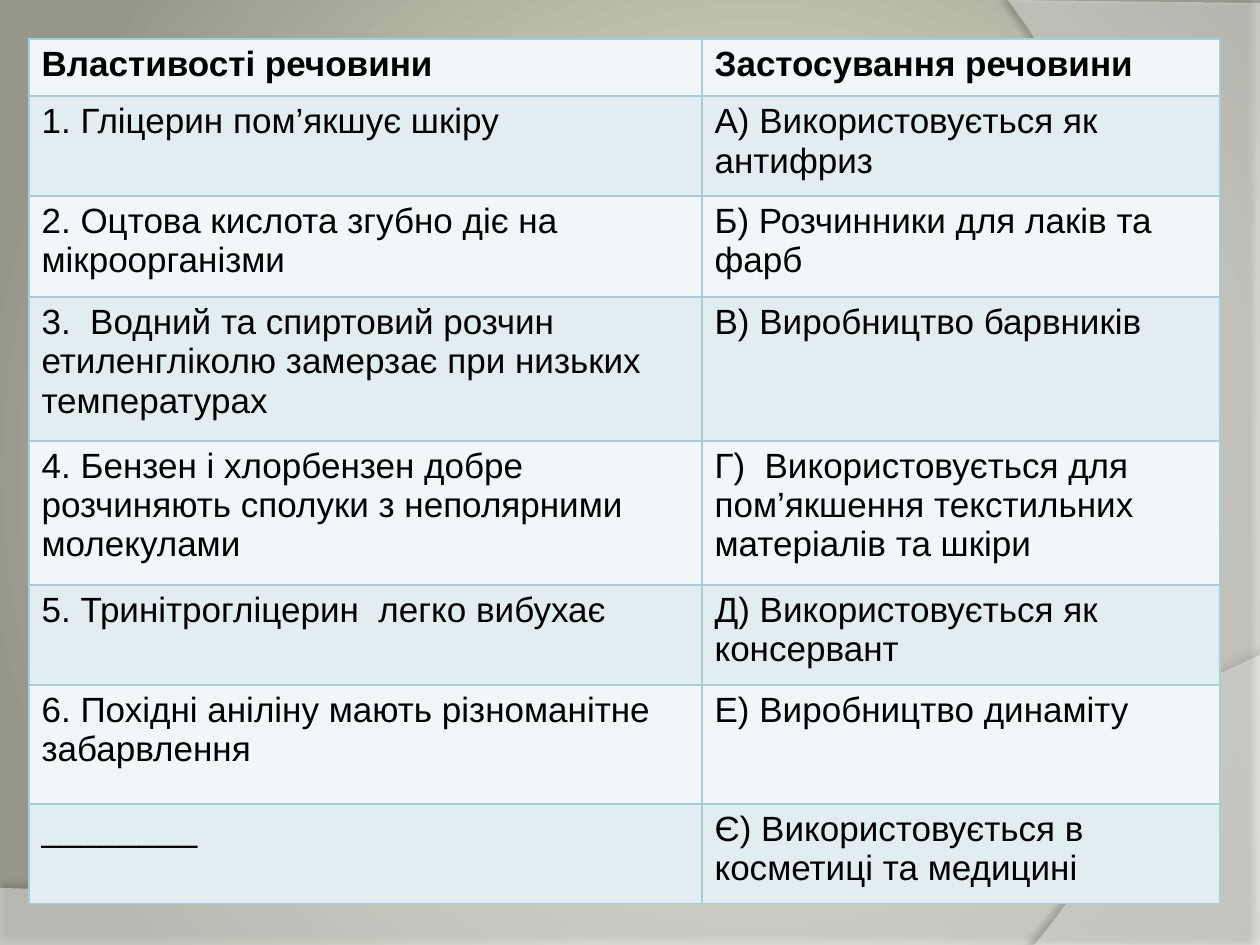
from lxml import etree
from pptx import Presentation
from pptx import util as u
from pptx.dml.color import RGBColor
from pptx.oxml.ns import qn

SCALE = 914400 / 126
ROWS = [
    (57, "Властивості речовини", "Застосування речовини"),
    (100, "1. Гліцерин пом’якшує шкіру", "А) Використовується як антифриз"),
    (101, "2. Оцтова кислота згубно діє на мікроорганізми", "Б) Розчинники для лаків та фарб"),
    (144, "3.  Водний та спиртовий розчин етиленгліколю замерзає при низьких температурах",
     "В) Виробництво барвників"),
    (144, "4. Бензен і хлорбензен добре розчиняють сполуки з неполярними молекулами",
     "Г)  Використовується для пом’якшення текстильних матеріалів та шкіри"),
    (100, "5. Тринітрогліцерин  легко вибухає", "Д) Використовується як консервант"),
    (119, "6. Похідні аніліну мають різноманітне забарвлення", "Е) Виробництво динаміту"),
    (100, "________", "Є) Використовується в косметиці та медицині"),
]


def px(length):
    return u.Emu(round(length * SCALE))


def color(code):
    return RGBColor.from_string(code)


def node(parent, tag, **attributes):
    return etree.SubElement(parent, qn(tag), {key: str(value) for key, value in attributes.items()})


def curve(start, first, second, end, steps=40):
    points = []
    for step in range(steps + 1):
        t = step / steps
        weights = ((1 - t) ** 3, 3 * t * (1 - t) ** 2, 3 * t * t * (1 - t), t ** 3)
        points.append(tuple(sum(weight * value for weight, value in zip(weights, axis))
                            for axis in zip(start, first, second, end)))
    return points


class SlideBuilder:
    """Holds the style and the current slide, and adds its elements."""

    font = "Arial"
    size = 20
    ink = "000000"
    border = "A8CDD7"
    bands = ("F1F6F8", "E1EDF0")

    def __init__(self, page):
        self.page = page

    def background(self, inner, outer):
        fill = self.page.background.fill
        fill.gradient()
        for stop, code, position in zip(fill.gradient_stops, (inner, outer), (0, 1)):
            stop.color.rgb = color(code)
            stop.position = position
        gradient = self.page.element.find(".//" + qn("a:gradFill"))
        gradient.remove(gradient.find(qn("a:lin")))
        radial = node(gradient, "a:path", path="circle")
        node(radial, "a:fillToRect", l=60000, t=50000, r=40000, b=50000)

    def wave(self, points, opacity, shadow_opacity, distance, angle):
        builder = self.page.shapes.build_freeform(*points[0], scale=SCALE)
        builder.add_line_segments(points[1:], close=True)
        shape = builder.convert_to_shape()
        shape.fill.solid()
        shape.fill.fore_color.rgb = color("FFFFFF")
        shape.line.fill.background()
        shape.shadow.inherit = False
        properties = shape.element.spPr
        node(properties.find(qn("a:solidFill"))[0], "a:alpha", val=opacity * 1000)
        shadow = node(properties.find(qn("a:effectLst")), "a:outerShdw", blurRad=u.Pt(4),
                      dist=u.Pt(distance), dir=angle * 60000, algn="ctr", rotWithShape=0)
        shade = node(shadow, "a:srgbClr", val=self.ink)
        node(shade, "a:alpha", val=shadow_opacity * 1000)

    def table(self, left, top, widths, rows):
        heights = [row[0] for row in rows]
        frame = self.page.shapes.add_table(len(rows), len(widths), px(left), px(top),
                                           px(sum(widths)), px(sum(heights)))
        table = frame.table
        for column, width in zip(table.columns, widths):
            column.width = px(width)
        for index, (height, *words) in enumerate(rows):
            table.rows[index].height = px(height)
            for cell, wording in zip(table.rows[index].cells, words):
                self.cell(cell, wording, self.bands[index % 2], index == 0)

    def cell(self, cell, wording, band, bold):
        cell.text_frame.text = wording
        span = cell.text_frame.paragraphs[0].runs[0]
        span.font.name = self.font
        span.font.size = u.Pt(self.size)
        span.font.bold = bold
        span.font.color.rgb = color(self.ink)
        properties = cell._tc.get_or_add_tcPr()
        for side in "LRTB":
            edge = node(properties, f"a:ln{side}", w=u.Pt(1))
            node(node(edge, "a:solidFill"), "a:srgbClr", val=self.border)
        cell.fill.solid()
        cell.fill.fore_color.rgb = color(band)


def main():
    deck = Presentation()
    deck.slide_width, deck.slide_height = px(1260), px(945)
    slide = SlideBuilder(deck.slides.add_slide(deck.slide_layouts[6]))
    slide.background("F4F5E0", "96978A")
    lower = curve((1260, 655), (704, 919), (493, 906), (0, 888))
    slide.wave([(0, 945), (1260, 945), *lower], 45, 35, 3.5, 270)
    right = curve((1034, 945), (1178, 780), (1283, 378), (1008, 0))
    slide.wave([(1260, 3), (1260, 945), *right], 40, 45, 4, 180)
    slide.table(29, 39, (673, 518), ROWS)
    deck.save("out.pptx")


if __name__ == "__main__":
    main()
